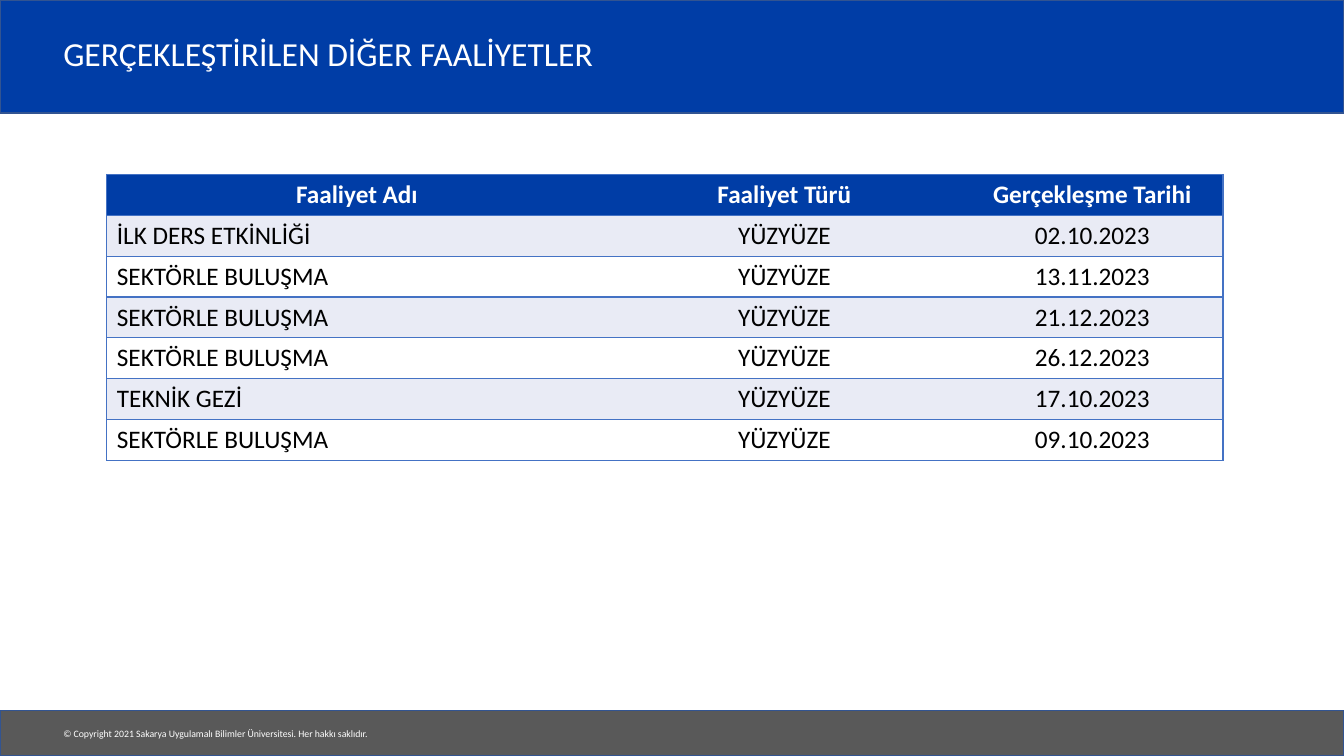
import lxml.etree
import pptx
import pptx.dml.color
import pptx.enum.shapes
import pptx.enum.text
import pptx.oxml.ns
import pptx.util

Inches = pptx.util.Inches
Pt = pptx.util.Pt
RGBColor = pptx.dml.color.RGBColor
PP_ALIGN = pptx.enum.text.PP_ALIGN
MSO_ANCHOR = pptx.enum.text.MSO_ANCHOR
qn = pptx.oxml.ns.qn

FONT = "Calibri"
BLUE = RGBColor(0x00, 0x3D, 0xA6)
GRAY = RGBColor(0x59, 0x59, 0x59)
BAR_LINE = RGBColor(0x32, 0x54, 0x91)
BORDER = RGBColor(0x44, 0x72, 0xC4)
BAND = RGBColor(0xE9, 0xEB, 0xF5)
WHITE = RGBColor(0xFF, 0xFF, 0xFF)
BLACK = RGBColor(0x00, 0x00, 0x00)

SLIDE_W, SLIDE_H = 13.33, 7.5
COLUMN_WIDTHS = [4.96, 3.52, 2.59]
ROW_HEIGHT = 2.84 / 7
HEADERS = ["Faaliyet Adı", "Faaliyet Türü", "Gerçekleşme Tarihi"]
ACTIVITIES = [
    ("İLK DERS ETKİNLİĞİ", "02.10.2023"),
    ("SEKTÖRLE BULUŞMA", "13.11.2023"),
    ("SEKTÖRLE BULUŞMA", "21.12.2023"),
    ("SEKTÖRLE BULUŞMA", "26.12.2023"),
    ("TEKNİK GEZİ", "17.10.2023"),
    ("SEKTÖRLE BULUŞMA", "09.10.2023"),
]


def add_run(p, text, size, color, bold=False):
    """Append one formatted run to a paragraph."""
    r = p.add_run()
    r.text = text
    r.font.name = FONT
    r.font.size = Pt(size)
    r.font.bold = bold
    r.font.color.rgb = color


def add_bar(s, left, top, width, height, color):
    """Draw a full-colour bar with a thin outline."""
    sp = s.shapes.add_shape(
        pptx.enum.shapes.MSO_SHAPE.RECTANGLE,
        Inches(left), Inches(top), Inches(width), Inches(height))
    sp.shadow.inherit = False
    sp.fill.solid()
    sp.fill.fore_color.rgb = color
    sp.line.color.rgb = BAR_LINE
    sp.line.width = Pt(1)


def add_label(s, left, top, width, height, text, size, wrap):
    """Place white text, vertically centred in its box."""
    sp = s.shapes.add_textbox(Inches(left), Inches(top), Inches(width), Inches(height))
    tf = sp.text_frame
    tf.word_wrap = wrap
    tf.vertical_anchor = MSO_ANCHOR.MIDDLE
    p = tf.paragraphs[0]
    add_run(p, text, size, WHITE)
    return p


def add_header(s, left, top, width, height):
    """Build the title band."""
    add_bar(s, left, top, width, height, BLUE)
    p = add_label(s, left + 0.53, top + 0.19, 11.03, 0.73,
                  "GERÇEKLEŞTİRİLEN DİĞER FAALİYETLER", 24, True)
    p.line_spacing = 0.9


def add_footer(s, left, top, width, height):
    """Build the copyright band."""
    add_bar(s, left, top, width, height, GRAY)
    add_label(s, left + 0.53, top + 0.12, 3.29, 0.22,
              "© Copyright 2021 Sakarya Uygulamalı Bilimler Üniversitesi. "
              "Her hakkı saklıdır.", 7, False)


def set_borders(cell, visible):
    """Draw the named sides of a cell and hide the others."""
    tc_pr = cell._tc.get_or_add_tcPr()
    for side in "LRTB":
        ln = lxml.etree.SubElement(tc_pr, qn(f"a:ln{side}"), w=str(Pt(1)))
        if side in visible:
            fill = lxml.etree.SubElement(ln, qn("a:solidFill"))
            lxml.etree.SubElement(fill, qn("a:srgbClr"), val=str(BORDER))
        else:
            lxml.etree.SubElement(ln, qn("a:noFill"))


def add_activity_table(s, left, top):
    """Build the banded table of activities."""
    rows = [HEADERS] + [(name, "YÜZYÜZE", date) for name, date in ACTIVITIES]
    table = s.shapes.add_table(
        len(rows), len(HEADERS), Inches(left), Inches(top),
        Inches(sum(COLUMN_WIDTHS)), Inches(ROW_HEIGHT * len(rows))).table
    for column, width in zip(table.columns, COLUMN_WIDTHS):
        column.width = Inches(width)
    for i, row in enumerate(rows):
        table.rows[i].height = Inches(ROW_HEIGHT)
        is_header = i == 0
        for j, text in enumerate(row):
            cell = table.cell(i, j)
            set_borders(cell, ("LTB", "TB", "RTB")[j])
            cell.fill.solid()
            cell.fill.fore_color.rgb = BLUE if is_header else BAND if i % 2 else WHITE
            p = cell.text_frame.paragraphs[0]
            p.alignment = PP_ALIGN.CENTER if is_header or j else PP_ALIGN.LEFT
            add_run(p, text, 18, WHITE if is_header else BLACK, is_header)


def main():
    """Build and save the slide."""
    prs = pptx.Presentation()
    prs.slide_width = Inches(SLIDE_W)
    prs.slide_height = Inches(SLIDE_H)
    s = prs.slides.add_slide(prs.slide_layouts[6])
    add_header(s, 0, 0, SLIDE_W, 1.12)
    add_footer(s, 0, 7.05, SLIDE_W, 0.45)
    add_activity_table(s, 1.06, 1.73)
    prs.save("out.pptx")


if __name__ == "__main__":
    main()
